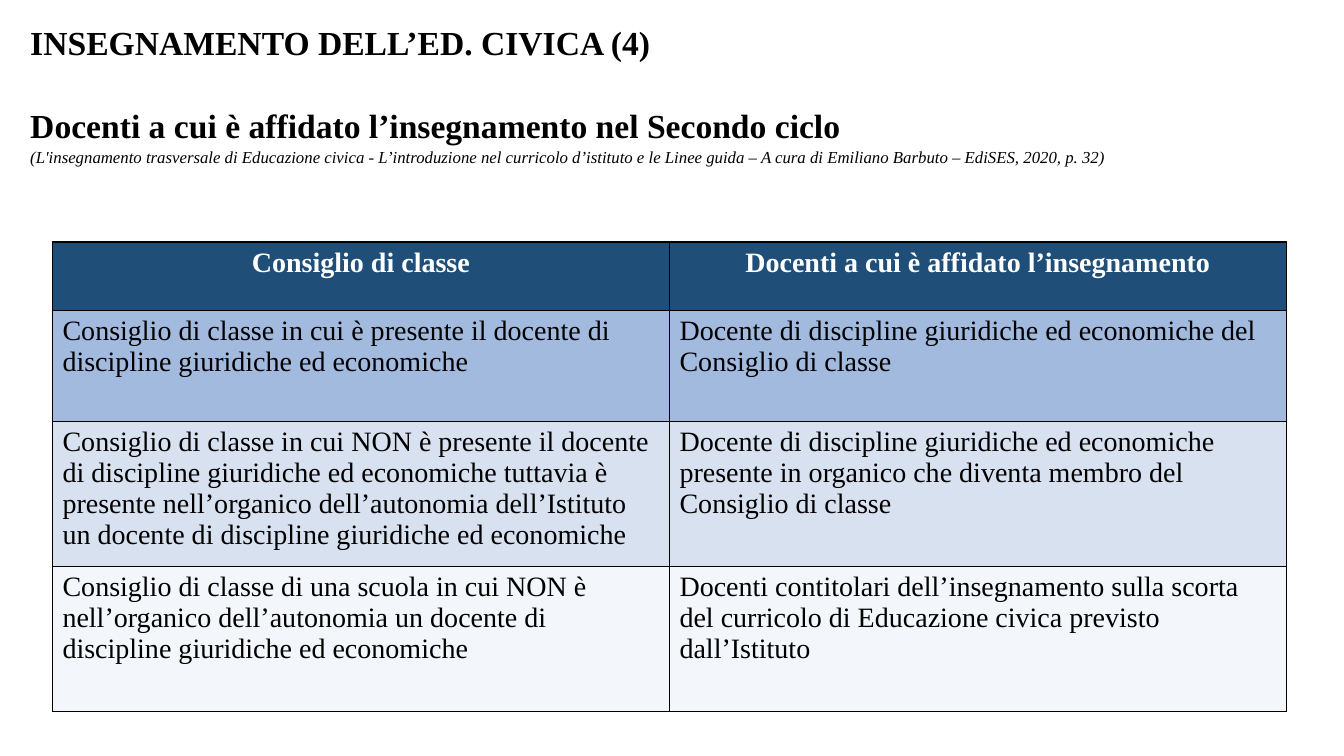
import dataclasses

import lxml.etree
import pptx
import pptx.dml.color
import pptx.enum.text
import pptx.oxml
import pptx.oxml.ns
import pptx.util


@dataclasses.dataclass(frozen=True)
class Theme:
    font: str = "Times New Roman"
    ink: str = "000000"
    header_ink: str = "FFFFFF"
    row_fills: tuple = ("1F4E79", "A2BADE", "D8E1F0", "F3F6FB")
    heading: int = 24
    source: int = 12
    cell: int = 20
    border: float = 1


theme = Theme()


def add_run(p, text, size, color, bold=False, italic=False):
    r = p.add_run()
    r.text = text
    r.font.name = theme.font
    r.font.size = pptx.util.Pt(size)
    r.font.bold = bold
    r.font.italic = italic
    r.font.color.rgb = pptx.dml.color.RGBColor.from_string(color)


def add_borders(cell):
    tc_pr = cell._tc.get_or_add_tcPr()
    for i, side in enumerate(("lnL", "lnR", "lnT", "lnB")):
        ln = pptx.oxml.parse_xml(
            f'<a:{side} {pptx.oxml.ns.nsdecls("a")} w="{pptx.util.Pt(theme.border)}">'
            f'<a:solidFill><a:srgbClr val="{theme.ink}"/></a:solidFill></a:{side}>'
        )
        tc_pr.insert(i, ln)


prs = pptx.Presentation()
prs.slide_width = pptx.util.Inches(13.33)
prs.slide_height = pptx.util.Inches(7.5)
slide = prs.slides.add_slide(prs.slide_layouts[5])

# Heading: title, subtitle and source
headings = [
    ("INSEGNAMENTO DELL’ED. CIVICA (4)", theme.heading, True, 0),
    ("Docenti a cui è affidato l’insegnamento nel Secondo ciclo", theme.heading, True, 28.5),
    (
        "(L'insegnamento trasversale di Educazione civica - L’introduzione nel curricolo "
        "d’istituto e le Linee guida – A cura di Emiliano Barbuto – EdiSES, 2020, p. 32)",
        theme.source, False, 0,
    ),
]
title = slide.shapes.title
title.left, title.top = pptx.util.Inches(0.2), pptx.util.Inches(0.14)
title.width, title.height = pptx.util.Inches(12.93), pptx.util.Inches(2.1)
tf = title.text_frame
tf.word_wrap = True
tf.auto_size = pptx.enum.text.MSO_AUTO_SIZE.NONE
tf.vertical_anchor = pptx.enum.text.MSO_ANCHOR.TOP
for i, (text, size, bold, gap) in enumerate(headings):
    p = tf.add_paragraph() if i else tf.paragraphs[0]
    p.alignment = pptx.enum.text.PP_ALIGN.LEFT
    p.line_spacing = 1.07
    if gap:
        p.space_before = pptx.util.Pt(gap)
    add_run(p, text, size, theme.ink, bold=bold, italic=not bold)

# Table: class councils and their teachers
rows = [
    ("Consiglio di classe", "Docenti a cui è affidato l’insegnamento"),
    (
        "Consiglio di classe in cui è presente il docente di discipline giuridiche ed economiche",
        "Docente di discipline giuridiche ed economiche del Consiglio di classe",
    ),
    (
        "Consiglio di classe in cui NON è presente il docente di discipline giuridiche ed "
        "economiche tuttavia è presente nell’organico dell’autonomia dell’Istituto un docente "
        "di discipline giuridiche ed economiche",
        "Docente di discipline giuridiche ed economiche presente in organico che diventa "
        "membro del Consiglio di classe",
    ),
    (
        "Consiglio di classe di una scuola in cui NON è nell’organico dell’autonomia un "
        "docente di discipline giuridiche ed economiche",
        "Docenti contitolari dell’insegnamento sulla scorta del curricolo di Educazione "
        "civica previsto dall’Istituto",
    ),
]
row_heights = (0.68, 1.1, 1.44, 1.44)
table = slide.shapes.add_table(
    len(rows), 2,
    pptx.util.Inches(0.52), pptx.util.Inches(2.4),
    pptx.util.Inches(12.24), pptx.util.Inches(sum(row_heights)),
).table
for i, (texts, height, fill) in enumerate(zip(rows, row_heights, theme.row_fills)):
    table.rows[i].height = pptx.util.Inches(height)
    header = i == 0
    for j, text in enumerate(texts):
        cell = table.cell(i, j)
        cell.fill.solid()
        cell.fill.fore_color.rgb = pptx.dml.color.RGBColor.from_string(fill)
        add_borders(cell)
        p = cell.text_frame.paragraphs[0]
        p.alignment = pptx.enum.text.PP_ALIGN.CENTER if header else pptx.enum.text.PP_ALIGN.LEFT
        add_run(p, text, theme.cell, theme.header_ink if header else theme.ink, bold=header)

prs.save("out.pptx")
